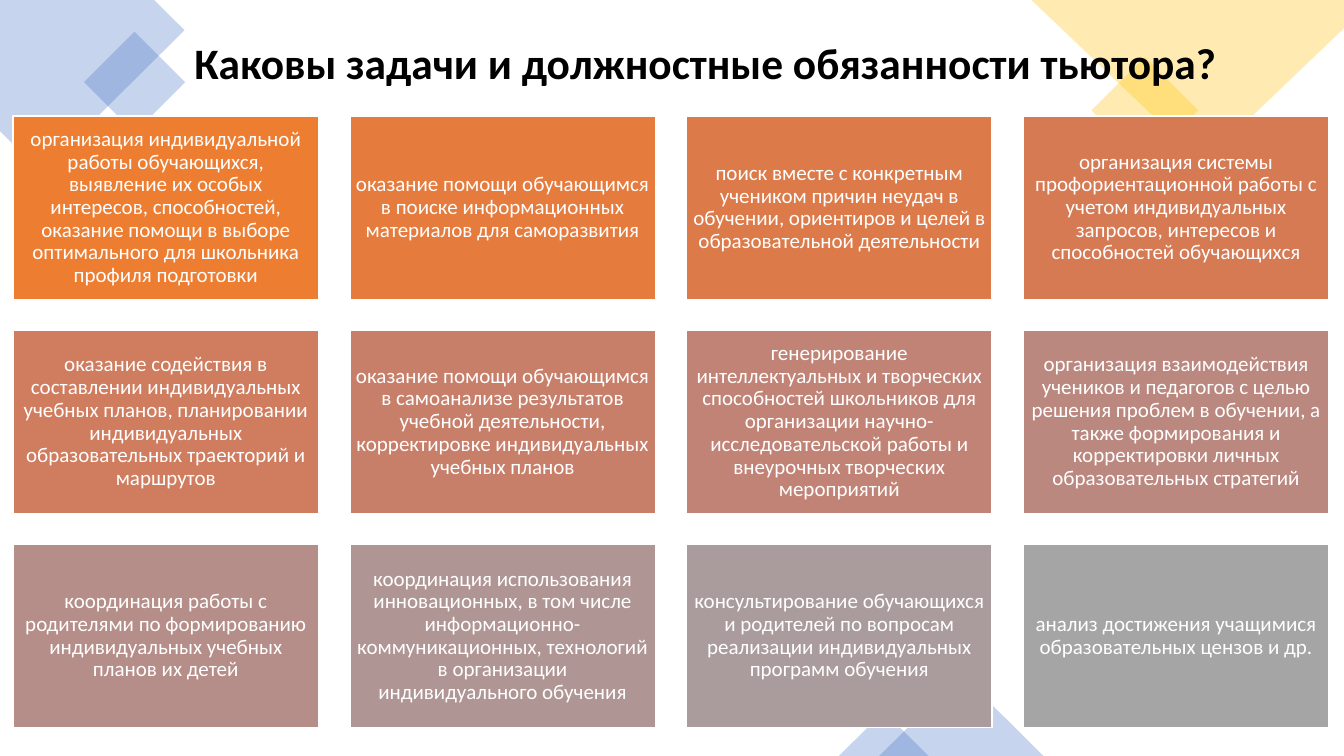
import colorsys

import pptx
import pptx.dml.color
import pptx.enum.shapes
import pptx.enum.text
import pptx.oxml
import pptx.oxml.ns
import pptx.util

Inches = pptx.util.Inches
MSO_SHAPE = pptx.enum.shapes.MSO_SHAPE
PP_ALIGN = pptx.enum.text.PP_ALIGN

COLORS = {
    "blue": "4472C4",
    "gold": "FFC000",
    "first_duty": "ED7D31",
    "last_duty": "A5A5A5",
    "white": "FFFFFF",
    "black": "000000",
}

TITLE = "Каковы задачи и должностные обязанности тьютора?"
DUTIES = [
    "организация индивидуальной работы обучающихся, выявление их особых интересов, "
    "способностей, оказание помощи в выборе оптимального для школьника профиля подготовки",
    "оказание помощи обучающимся в поиске информационных материалов для саморазвития",
    "поиск вместе с конкретным учеником причин неудач в обучении, ориентиров и целей "
    "в образовательной деятельности",
    "организация системы профориентационной работы с учетом индивидуальных запросов, "
    "интересов и способностей обучающихся",
    "оказание содействия в составлении индивидуальных учебных планов, планировании "
    "индивидуальных образовательных траекторий и маршрутов",
    "оказание помощи обучающимся в самоанализе результатов учебной деятельности, "
    "корректировке индивидуальных учебных планов",
    "генерирование интеллектуальных и творческих способностей школьников для организации "
    "научно-исследовательской работы и внеурочных творческих мероприятий",
    "организация взаимодействия учеников и педагогов с целью решения проблем в обучении, "
    "а также формирования и корректировки личных образовательных стратегий",
    "координация работы с родителями по формированию индивидуальных учебных планов их детей",
    "координация использования инновационных, в том числе информационно-коммуникационных, "
    "технологий в организации индивидуального обучения",
    "консультирование обучающихся и родителей по вопросам реализации индивидуальных "
    "программ обучения",
    "анализ достижения учащимися образовательных цензов и др.",
]

# Grid of duties, in inches
COLUMNS = 4
GRID_LEFT, GRID_TOP = 0.13, 1.15
CARD_WIDTH, CARD_HEIGHT = 3.03, 1.82
COLUMN_STEP, ROW_STEP = 3.34, 2.125


def rgb(hex_color):
    return pptx.dml.color.RGBColor.from_string(hex_color)


def write_text(shape, text, size, color, bold=False, align=PP_ALIGN.LEFT, inset=0.06):
    frame = shape.text_frame
    frame.word_wrap = True
    frame.vertical_anchor = pptx.enum.text.MSO_ANCHOR.MIDDLE
    frame.margin_left = frame.margin_right = Inches(inset)
    frame.margin_top = frame.margin_bottom = Inches(0.06)
    paragraph = frame.paragraphs[0]
    paragraph.alignment = align
    paragraph.line_spacing = 0.9
    run = paragraph.add_run()
    run.text = text
    run.font.name = "Calibri"
    run.font.size = pptx.util.Pt(size)
    run.font.bold = bold
    run.font.color.rgb = rgb(color)


def paint(shape, color, opacity=None):
    shape.shadow.inherit = False
    shape.fill.solid()
    shape.fill.fore_color.rgb = rgb(color)
    if opacity is None:
        shape.line.color.rgb = rgb(COLORS["white"])
        shape.line.width = pptx.util.Pt(1)
    else:
        shape.line.fill.background()
        fill_color = shape.element.spPr.find(".//" + pptx.oxml.ns.qn("a:srgbClr"))
        alpha = pptx.oxml.parse_xml(
            f'<a:alpha {pptx.oxml.ns.nsdecls("a")} val="{opacity * 1000}"/>')
        fill_color.append(alpha)


def add_box(slide, kind, left, top, width, height):
    return slide.shapes.add_shape(
        kind, Inches(left), Inches(top), Inches(width), Inches(height))


def add_corner(slide, points, color):
    start, *rest = [(Inches(x), Inches(y)) for x, y in points]
    builder = slide.shapes.build_freeform(*start)
    builder.add_line_segments(rest, close=True)
    paint(builder.convert_to_shape(), color, opacity=30)


def add_accent(slide, kind, left, top, width, height, color, rotation=0):
    accent = add_box(slide, kind, left, top, width, height)
    accent.rotation = rotation
    paint(accent, color, opacity=30)


def duty_color(share):
    """Blend the first and last duty colours in hue, lightness and saturation."""
    first, last = (
        colorsys.rgb_to_hls(*(part / 255 for part in rgb(COLORS[name])))
        for name in ("first_duty", "last_duty"))
    blend = [a + (b - a) * share for a, b in zip(first, last)]
    return "".join(f"{round(part * 255):02X}" for part in colorsys.hls_to_rgb(*blend))


def add_duty(slide, index, duty):
    row, column = divmod(index, COLUMNS)
    card = add_box(slide, MSO_SHAPE.RECTANGLE, GRID_LEFT + column * COLUMN_STEP,
                   GRID_TOP + row * ROW_STEP, CARD_WIDTH, CARD_HEIGHT)
    paint(card, duty_color(index / (len(DUTIES) - 1)))
    write_text(card, duty, size=15, color=COLORS["white"], align=PP_ALIGN.CENTER)


def main():
    deck = pptx.Presentation()
    deck.slide_width, deck.slide_height = Inches(13.33), Inches(7.5)
    slide = deck.slides.add_slide(deck.slide_layouts[6])
    blue, gold = COLORS["blue"], COLORS["gold"]

    # Background decoration
    add_corner(slide, [(1.53, 0), (0, 0), (0, 1.3), (0.41, 1.71), (1.83, 0.3)], blue)
    add_accent(slide, MSO_SHAPE.RECTANGLE, 0.98, 0.46, 0.71, 0.71, blue, rotation=315)
    add_accent(slide, MSO_SHAPE.RECTANGLE, 10.98, 0.72, 0.75, 0.75, gold, rotation=315)
    add_corner(slide, [(13.33, 0), (10.23, 0), (11.93, 1.62), (13.33, 0.28)], gold)
    add_accent(slide, MSO_SHAPE.ISOSCELES_TRIANGLE, 8.72, 6.69, 1.63, 0.81, blue)
    add_accent(slide, MSO_SHAPE.ISOSCELES_TRIANGLE, 8.32, 7.06, 0.89, 0.44, blue)

    # Title
    title = slide.shapes.add_textbox(Inches(1.83), Inches(0.35), Inches(10.8), Inches(0.6))
    write_text(title, TITLE, size=31, color=COLORS["black"], bold=True, inset=0.1)

    # Duties
    for index, duty in enumerate(DUTIES):
        add_duty(slide, index, duty)

    deck.save("out.pptx")


if __name__ == "__main__":
    main()
